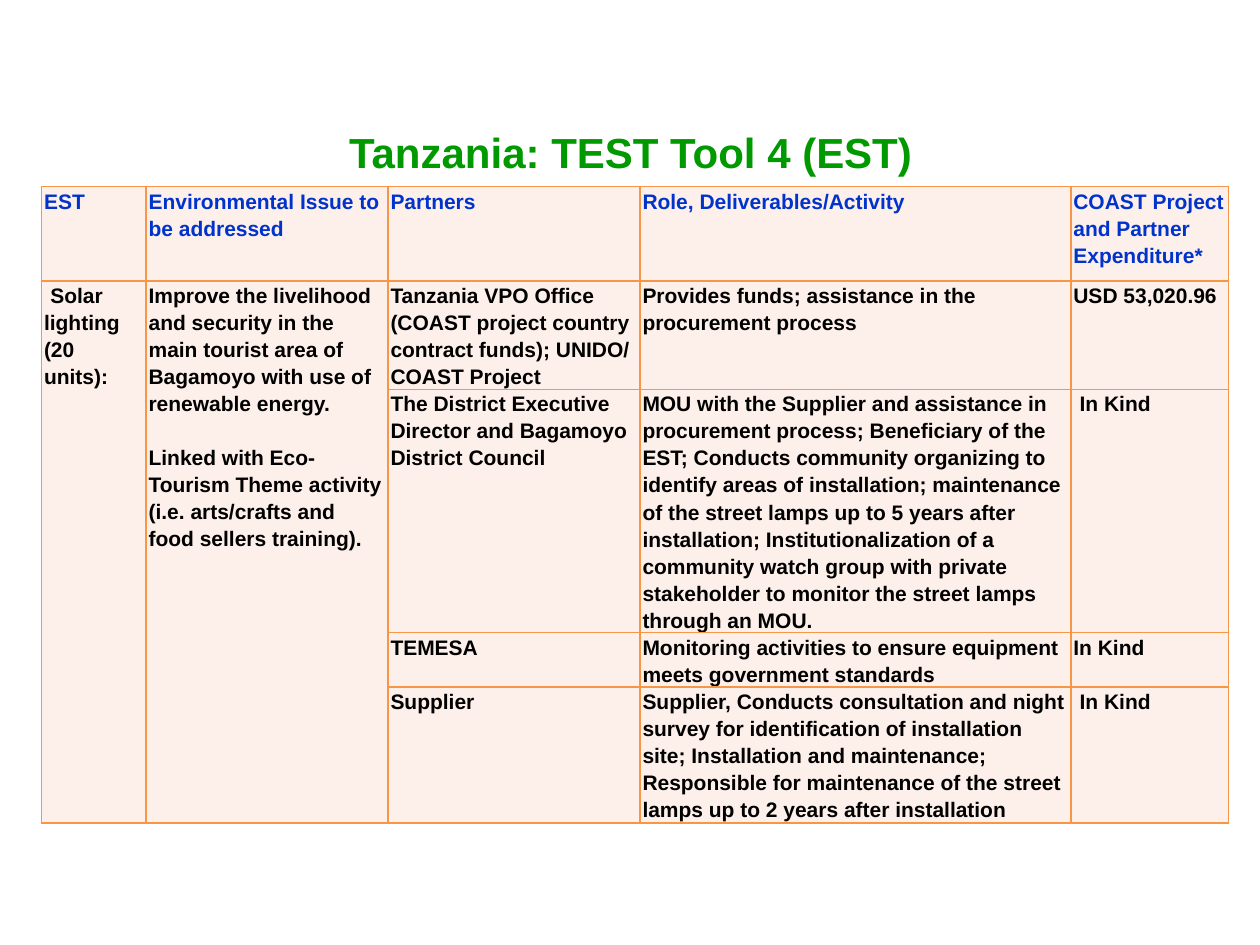
from lxml.etree import SubElement
from pptx import Presentation
from pptx.dml.color import RGBColor
from pptx.enum.text import MSO_ANCHOR, PP_ALIGN
from pptx.oxml.ns import qn
from pptx.util import Inches, Pt

COLORS = {"title": "009900", "heading": "0033CC", "body": "000000",
          "cell": "FDEFE9", "border": "F79646"}
COLUMN_WIDTHS = [0.83, 1.92, 2, 3.42, 1.25]
ROW_HEIGHTS = [0.75, 0.86, 1.93, 0.43, 1.08]
HEADINGS = ["EST", "Environmental Issue to be addressed", "Partners",
            "Role, Deliverables/Activity", "COAST Project and Partner Expenditure*"]
TECHNOLOGY = "Solar lighting (20 units):"
ISSUES = [
    "Improve the livelihood and security in the main tourist area of Bagamoyo "
    "with use of renewable energy.",
    "Linked with Eco-Tourism Theme activity (i.e. arts/crafts and food sellers training).",
]
PARTNERS = [
    ("Tanzania VPO Office (COAST project country contract funds); UNIDO/ COAST Project",
     "Provides funds; assistance in the procurement process",
     "USD 53,020.96", False),
    ("The District Executive Director and Bagamoyo District Council",
     "MOU with the Supplier and assistance in procurement process; Beneficiary of the EST; "
     "Conducts community organizing to identify areas of installation; maintenance of the "
     "street lamps up to 5 years after installation; Institutionalization of a community "
     "watch group with private stakeholder to monitor the street lamps through an MOU.",
     "In Kind", True),
    ("TEMESA",
     "Monitoring activities to ensure equipment meets government standards",
     "In Kind", False),
    ("Supplier",
     "Supplier, Conducts consultation and night survey for identification of installation "
     "site; Installation and maintenance; Responsible for maintenance of the street lamps "
     "up to 2 years after installation",
     "In Kind", True),
]


def format_font(font, size, color):
    """Apply the bold Arial used throughout the slide."""
    font.name = "Arial"
    font.size = Pt(size)
    font.bold = True
    font.color.rgb = RGBColor.from_string(COLORS[color])


def format_cell(cell):
    """Give a cell its fill, narrow margins and orange borders."""
    cell.fill.solid()
    cell.fill.fore_color.rgb = RGBColor.from_string(COLORS["cell"])
    cell.margin_left = cell.margin_right = Inches(0.02)
    cell.margin_top = cell.margin_bottom = 0
    properties = cell._tc.get_or_add_tcPr()
    for position, side in enumerate(("a:lnL", "a:lnR", "a:lnT", "a:lnB")):
        line = SubElement(properties, qn(side), w=str(Pt(1)))
        fill = SubElement(line, qn("a:solidFill"))
        SubElement(fill, qn("a:srgbClr"), val=COLORS["border"])
        properties.insert(position, line)


def fill_cell(cell, text, color="body", indented=False):
    """Write the paragraphs of a cell, optionally indenting the first line."""
    cell.text_frame.text = text
    for index, paragraph in enumerate(cell.text_frame.paragraphs):
        paragraph.line_spacing = 1.15
        paragraph.space_before = Pt(15.5 if index else 0)
        if indented:
            paragraph._p.get_or_add_pPr().set("indent", str(Inches(0.05)))
        for run in paragraph.runs:
            format_font(run.font, 12, color)


def place_title(slide, left, top, width, height):
    """Place the slide heading in the title placeholder."""
    title = slide.shapes.title
    title.left, title.top, title.width, title.height = left, top, width, height
    frame = title.text_frame
    frame.text = "Tanzania: TEST Tool 4 (EST)"
    frame.vertical_anchor = MSO_ANCHOR.TOP
    frame.margin_top = Inches(0.08)
    frame.paragraphs[0].alignment = PP_ALIGN.CENTER
    format_font(frame.paragraphs[0].runs[0].font, 24, "title")


def place_table(slide, left, top, width, height):
    """Place the partner table, sharing the box among its columns and rows."""
    table = slide.shapes.add_table(len(ROW_HEIGHTS), len(COLUMN_WIDTHS),
                                   left, top, width, height).table
    table.horz_banding = False
    for column, share in zip(table.columns, COLUMN_WIDTHS):
        column.width = int(width * share / sum(COLUMN_WIDTHS))
    for row, share in zip(table.rows, ROW_HEIGHTS):
        row.height = int(height * share / sum(ROW_HEIGHTS))
    for cell in table.iter_cells():
        format_cell(cell)
    for column, heading in enumerate(HEADINGS):
        fill_cell(table.cell(0, column), heading, "heading")
    for column in range(2):
        table.cell(1, column).merge(table.cell(len(PARTNERS), column))
    fill_cell(table.cell(1, 0), TECHNOLOGY, indented=True)
    fill_cell(table.cell(1, 1), "\n".join(ISSUES))
    for row, (partner, role, expenditure, indented) in enumerate(PARTNERS, start=1):
        fill_cell(table.cell(row, 2), partner)
        fill_cell(table.cell(row, 3), role)
        fill_cell(table.cell(row, 4), expenditure, indented=indented)


def main():
    """Build and save the presentation."""
    presentation = Presentation()
    presentation.slide_width, presentation.slide_height = Inches(10), Inches(7.5)
    slide = presentation.slides.add_slide(presentation.slide_layouts[5])
    place_title(slide, Inches(0.42), Inches(0.92), Inches(9.17), Inches(0.75))
    place_table(slide, Inches(0.33), Inches(1.48),
                Inches(sum(COLUMN_WIDTHS)), Inches(sum(ROW_HEIGHTS)))
    presentation.save("out.pptx")


if __name__ == "__main__":
    main()
